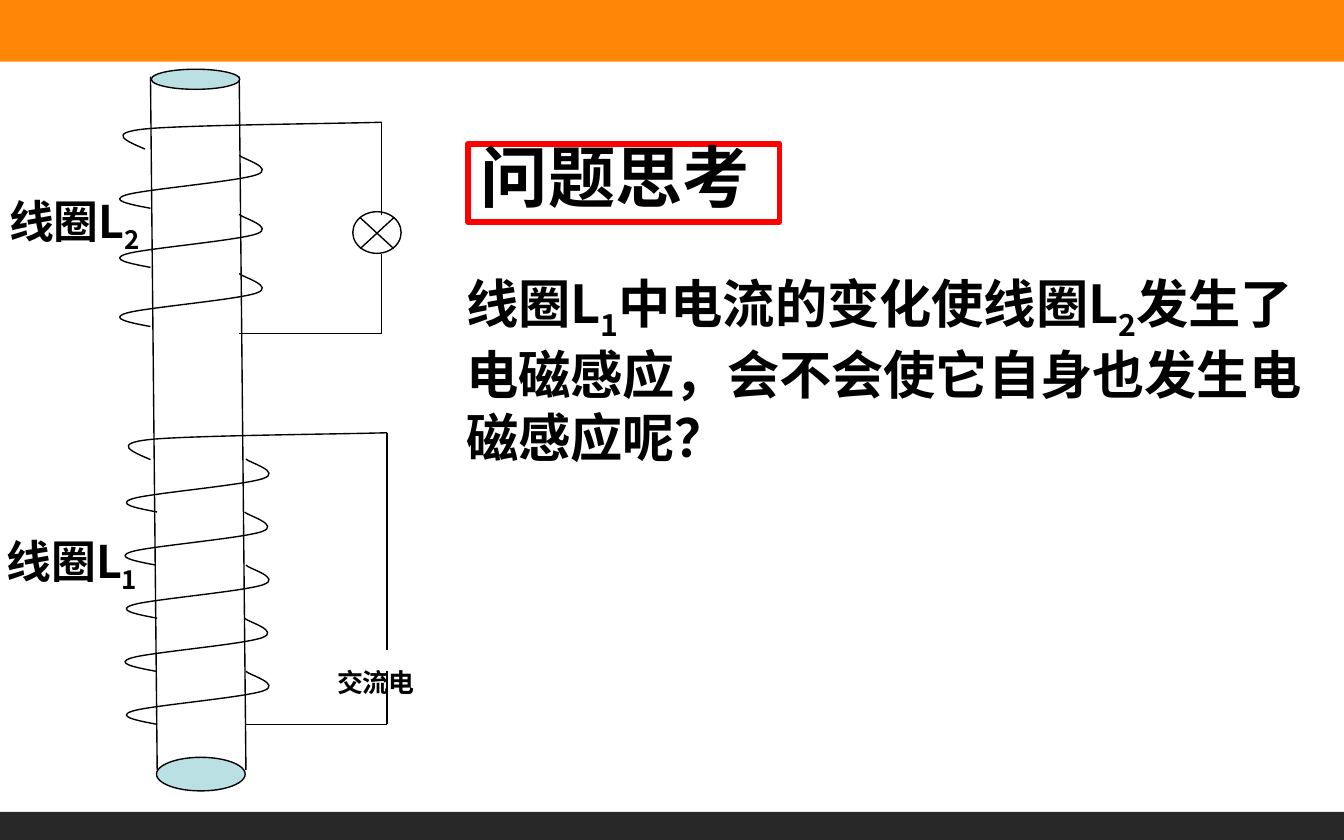
from lxml import etree
from pptx import Presentation
from pptx import util as u
from pptx.dml.color import RGBColor
from pptx.enum import shapes, text
from pptx.oxml.ns import qn

COLORS = {"bar": "FF8607", "footer": "282828", "core": "BBE0E3",
          "ink": "000000", "frame": "FF0000"}
COLUMNS = 100  # square grid cells across the slide
CJK = "Noto Sans CJK SC"

# Control points of the curves, as steps from their starting point
TURN = [(-1.6, -.3), (-3.1, -.6), (-1.8, -1), (-.5, -1.4), (6.5, -2),
        (7.9, -2.5), (9.3, -3), (6.8, -3.7), (6.6, -3.95)]
LEAD = [(-1.4, -.6), (-2.9, -1.2), (0, -1.5), (3, -1.8), (14.7, -1.9),
        (17.6, -2)]


class Board:
    """Draws on one slide; all lengths are in grid cells."""

    def __init__(self, deck):
        self.slide = deck.slides.add_slide(deck.slide_layouts[6])
        self.cell = deck.slide_width / COLUMNS

    def emu(self, *cells):
        return [u.Emu(round(c * self.cell)) for c in cells]

    def outline(self, item, color="ink", weight=.75):
        item.line.color.rgb = RGBColor.from_string(COLORS[color])
        item.line.width = u.Pt(weight)

    def shape(self, kind, box, fill=None, line=None, weight=.75):
        item = self.slide.shapes.add_shape(kind, *self.emu(*box))
        item.shadow.inherit = False
        if fill:
            item.fill.solid()
            item.fill.fore_color.rgb = RGBColor.from_string(COLORS[fill])
        else:
            item.fill.background()
        if line:
            self.outline(item, line, weight)
        else:
            item.line.fill.background()
        return item

    def oval(self, center, size, fill=None):
        (x, y), (w, h) = center, size
        self.shape(shapes.MSO_SHAPE.OVAL, (x - w / 2, y - h / 2, w, h), fill, "ink")

    def wire(self, *points):
        for start, end in zip(points, points[1:]):
            item = self.slide.shapes.add_connector(
                shapes.MSO_CONNECTOR.STRAIGHT, *self.emu(*start, *end))
            self.outline(item)
            etree.SubElement(item._element.spPr, qn("a:effectLst"))

    def curve(self, x, y, steps):
        builder = self.slide.shapes.build_freeform(*self.emu(x, y))
        builder.add_line_segments(
            [self.emu(x + dx, y + dy) for dx, dy in steps], close=False)
        item = builder.convert_to_shape()
        item.shadow.inherit = False
        item.fill.background()
        self.outline(item)
        # Every three straight segments become one cubic Bezier segment
        segments = list(item._element.iter(qn("a:lnTo")))
        for first in range(0, len(segments), 3):
            bezier = etree.Element(qn("a:cubicBezTo"))
            segments[first].addprevious(bezier)
            for segment in segments[first:first + 3]:
                bezier.append(segment[0])
                segment.getparent().remove(segment)

    def words(self, item, runs, size, font=CJK, **spacing):
        """Fill a shape with (wording, is_subscript) runs."""
        frame = item.text_frame
        frame.word_wrap = True
        frame.vertical_anchor = text.MSO_ANCHOR.TOP
        paragraph = frame.paragraphs[0]
        for name, value in {"alignment": text.PP_ALIGN.LEFT, **spacing}.items():
            setattr(paragraph, name, value)
        for wording, subscript in runs:
            run = paragraph.add_run()
            run.text = wording
            for name, value in {"size": u.Pt(size), "bold": True, "name": font}.items():
                setattr(run.font, name, value)
            run.font.color.rgb = RGBColor.from_string(COLORS["ink"])
            etree.SubElement(run.font._element, qn("a:ea"), typeface=CJK)
            if subscript:
                run.font._element.set("baseline", "-25000")

    def label(self, box, runs, size, **spacing):
        self.words(self.slide.shapes.add_textbox(*self.emu(*box)), runs, size, **spacing)


def main():
    deck = Presentation()
    deck.slide_width, deck.slide_height = u.Inches(10), u.Inches(6.25)
    board = Board(deck)
    rectangle = shapes.MSO_SHAPE.RECTANGLE

    # Top and bottom bars
    board.shape(rectangle, (0, -.4, 100, 5), "bar")
    board.shape(rectangle, (0, 60.4, 100, 2.1), "footer")

    # Iron core
    for side in (11.2, 17.8):
        board.wire((side + .5, 57.3), (side, 5.7))
    board.oval((14.95, 57.6), (6.6, 2.5), "core")
    board.oval((14.55, 5.9), (6.6, 1.5), "core")

    # Coil L1 and its supply circuit
    for turn in range(5):
        board.curve(11.7 - .1 * (turn % 2), 53.9 - 3.95 * turn, TURN)
    board.curve(11.2, 34.2, LEAD)
    board.wire((18.3, 53.9), (28.8, 53.9), (28.8, 49.9))
    board.wire((28.8, 48.4), (28.8, 32.2))

    # Coil L2 and its lamp circuit
    for turn in range(3):
        board.curve(11.2, 24.3 - 4.4 * turn, TURN)
    board.curve(10.8, 11.1, LEAD)
    board.wire((17.8, 24.8), (28.4, 24.8), (28.4, 18.9))
    board.wire((28.4, 16), (28.4, 9.1))
    board.oval((28.05, 17.3), (3.6, 3.1))
    board.wire((26.8, 18.5), (29.3, 16.2))
    board.wire((26.8, 16.2), (29.3, 18.5))

    # Diagram labels
    board.label((-.3, 13.9, 12.2, 5), [("线圈L", False), ("2", True)], 24)
    board.label((-.5, 39.2, 12.6, 5), [("线圈L", False), ("1", True)], 24)
    board.label((24.1, 46.9, 12.6, 3.6), [("交流电", True)], 24)

    # Question heading and text
    heading = board.shape(rectangle, (34.8, 10.7, 23.2, 5.8), None, "frame", 3)
    board.words(heading, [("问题思考", False)], 36, "Arial", line_spacing=.8)
    board.label((33.7, 19.7, 65.5, 17), [
        ("线圈L", False), ("1", True), ("中电流的变化使线圈L", False), ("2", True),
        ("发生了电磁感应，会不会使它自身也发生电磁感应呢？", False)], 28)

    deck.save("out.pptx")


if __name__ == "__main__":
    main()
